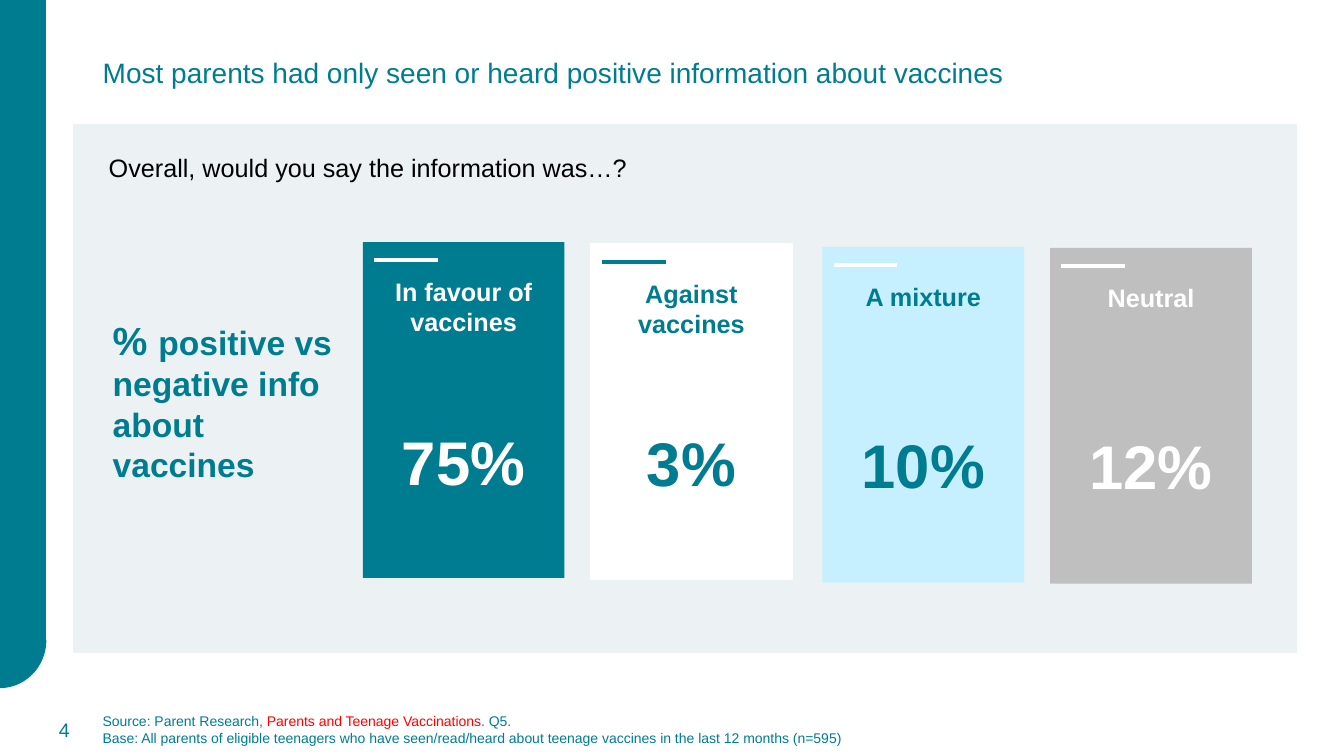
from lxml import etree
from pptx import Presentation
from pptx.dml.color import RGBColor
from pptx.enum.shapes import MSO_CONNECTOR, MSO_SHAPE
from pptx.enum.text import MSO_ANCHOR, MSO_AUTO_SIZE, PP_ALIGN
from pptx.oxml.ns import qn
from pptx.util import Pt

COLOURS = {
    "teal": "007C91",
    "white": "FFFFFF",
    "panel": "ECF1F4",
    "sky": "C6F0FF",
    "grey": "BFBFBF",
    "red": "FF0000",
    "black": "000000",
}


def add_text(p, text, size=18, colour="teal", bold=False, align=PP_ALIGN.LEFT, before=0, spacing=1.0):
    p.alignment = align
    p.space_before = Pt(before)
    p.line_spacing = spacing
    r = p.add_run()
    r.text = text
    r.font.name = "Arial"
    r.font.size = Pt(size)
    r.font.bold = bold
    r.font.color.rgb = RGBColor.from_string(COLOURS[colour])


def add_block(kind, left, top, width, height, fill, line=None, weight=1):
    sp = s.shapes.add_shape(kind, Pt(left), Pt(top), Pt(width), Pt(height))
    sp.shadow.inherit = False
    sp.fill.solid()
    sp.fill.fore_color.rgb = RGBColor.from_string(COLOURS[fill])
    if line:
        sp.line.color.rgb = RGBColor.from_string(COLOURS[line])
        sp.line.width = Pt(weight)
    else:
        sp.line.fill.background()
    return sp


prs = Presentation()
prs.slide_width, prs.slide_height = Pt(960), Pt(540)
s = prs.slides.add_slide(prs.slide_layouts[5])

add_block(MSO_SHAPE.RECTANGLE, 0, 0, 32.6, 457.2, "teal", "teal")
foot = add_block(MSO_SHAPE.PIE, -32.9, 423.4, 65.5, 67.6, "teal", "teal")
foot.adjustments[0] = 0
foot.adjustments[1] = 54

title = s.shapes.title
title.left, title.top, title.width, title.height = Pt(66.2), Pt(0.7), Pt(828), Pt(104.4)
title.text_frame.auto_size = MSO_AUTO_SIZE.NONE
title.text_frame.vertical_anchor = MSO_ANCHOR.MIDDLE
add_text(title.text_frame.paragraphs[0],
         "Most parents had only seen or heard positive information about vaccines", size=20, spacing=0.9)

add_block(MSO_SHAPE.RECTANGLE, 51.1, 87.8, 876.2, 379.4, "panel", "white", 1.5)

texts = [
    (66.2, 506.9, 835.2, 28.8, MSO_ANCHOR.MIDDLE, PP_ALIGN.LEFT, [
        [("Source: Parent Research, ", 10, "teal", False),
         ("Parents and Teenage Vaccinations", 10, "red", False),
         (". Q5.", 10, "teal", False)],
        [("Base: All parents of eligible teenagers who have seen/read/heard about teenage vaccines "
          "in the last 12 months (n=595)", 10, "teal", False)]]),
    (10.1, 506.9, 46.8, 28.8, MSO_ANCHOR.MIDDLE, PP_ALIGN.RIGHT, [[("4", 14, "teal", False)]]),
    (73.4, 221.8, 172.1, 128.2, MSO_ANCHOR.MIDDLE, PP_ALIGN.LEFT, [
        [("% ", 28, "teal", True), ("positive vs negative info about vaccines", 24, "teal", True)]]),
    (70.6, 105.1, 401, 28.8, MSO_ANCHOR.TOP, PP_ALIGN.LEFT, [
        [("Overall, would you say the information was…?", 18, "black", False)]]),
]
for left, top, width, height, anchor, align, paragraphs in texts:
    tf = s.shapes.add_textbox(Pt(left), Pt(top), Pt(width), Pt(height)).text_frame
    tf.word_wrap = True
    tf.vertical_anchor = anchor
    for i, runs in enumerate(paragraphs):
        p = tf.add_paragraph() if i else tf.paragraphs[0]
        for text, size, colour, bold in runs:
            add_text(p, text, size=size, colour=colour, bold=bold, align=align)

cards = [
    ("In favour of vaccines", "75%", 259.2, 173, "teal", None, "white", "white", 62),
    ("Against vaccines", "3%", 421.9, 174.2, "white", "white", "teal", "teal", 62),
    ("A mixture", "10%", 587.5, 176.4, "sky", None, "teal", "white", 83),
    ("Neutral", "12%", 750.2, 177.1, "grey", None, "white", "white", 83),
]
for label, share, left, top, fill, line, ink, accent, gap in cards:
    card = add_block(MSO_SHAPE.RECTANGLE, left, top, 144, 239.8, fill, line)
    tf = card.text_frame
    tf.word_wrap = True
    tf.vertical_anchor = MSO_ANCHOR.TOP
    tf.margin_top = Pt(24.3)
    add_text(tf.paragraphs[0], label, colour=ink, bold=True, align=PP_ALIGN.CENTER)
    add_text(tf.add_paragraph(), share, size=44, colour=ink, bold=True, align=PP_ALIGN.CENTER, before=gap)

    y = Pt(top + 13)
    dash = s.shapes.add_connector(MSO_CONNECTOR.STRAIGHT, Pt(left + 8), y, Pt(left + 53.5), y)
    dash.line.color.rgb = RGBColor.from_string(COLOURS[accent])
    dash.line.width = Pt(3)
    etree.SubElement(dash._element.spPr, qn("a:effectLst"))

prs.save("out.pptx")
